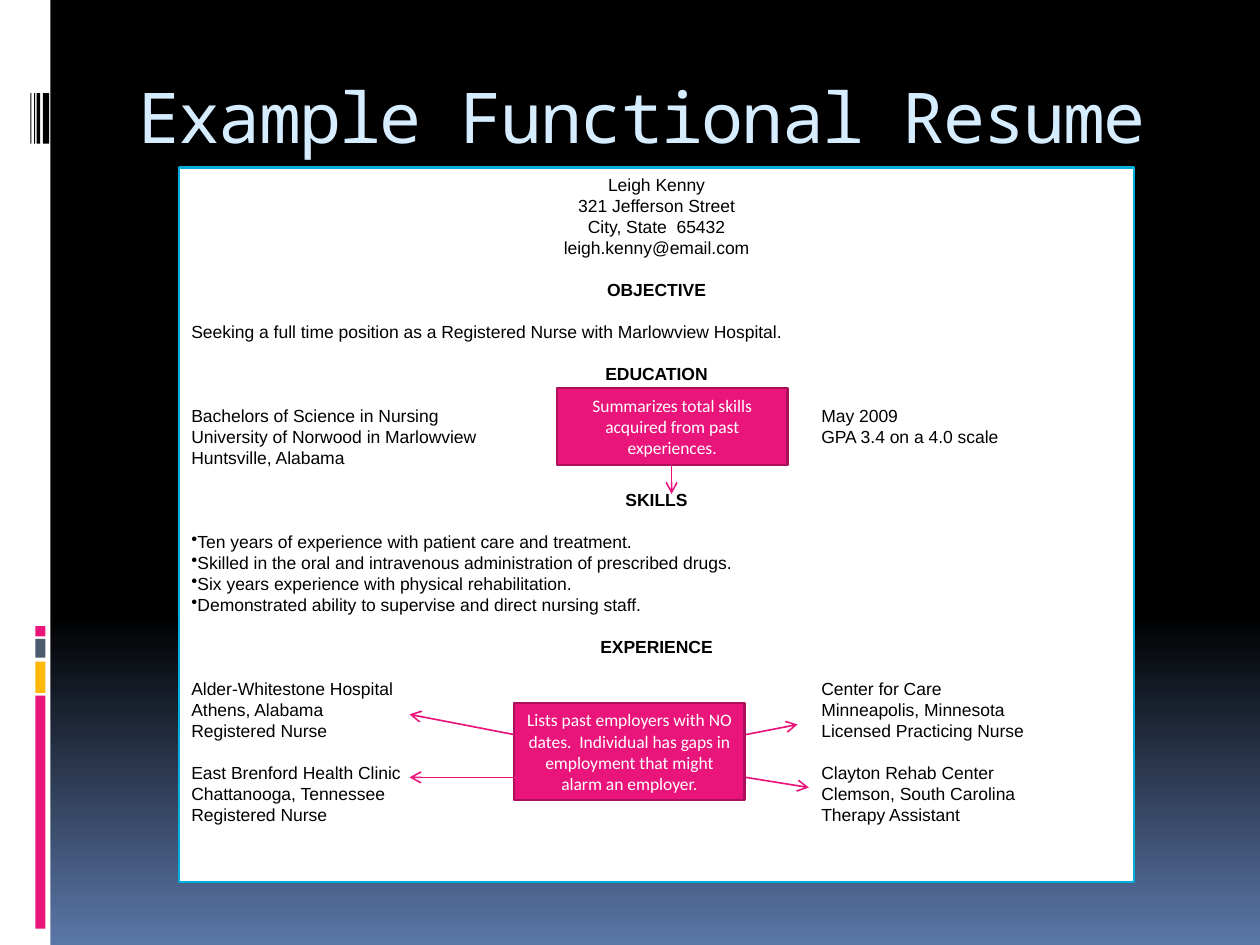
from dataclasses import dataclass

import lxml.etree
import pptx
import pptx.dml.color
import pptx.enum.shapes
import pptx.enum.text
import pptx.oxml.ns
import pptx.util
from pptx.util import Inches

ALIGN = pptx.enum.text.PP_ALIGN
ANCHOR = pptx.enum.text.MSO_ANCHOR


@dataclass(frozen=True)
class Theme:
    white: str = "FFFFFF"
    black: str = "000000"
    night_blue: str = "5B77A8"
    title_blue: str = "D6ECFF"
    cyan: str = "00ADDC"
    pink: str = "EA157A"
    dark_pink: str = "AD105A"
    amber: str = "FEB80A"
    slate: str = "4E5B6F"
    title_font: str = "Noto Sans Mono"
    resume_font: str = "Arial"
    callout_font: str = "Calibri"
    title_size: float = 40
    body_size: float = 10
    blank_line: float = 12
    outline: float = 1.5
    arrow: float = 0.94


@dataclass(frozen=True)
class Bar:
    left: float
    top: float
    width: float
    height: float
    color: str


@dataclass(frozen=True)
class Callout:
    left: float
    top: float
    width: float
    height: float
    text: str


@dataclass(frozen=True)
class Arrow:
    start: tuple[float, float]
    end: tuple[float, float]


@dataclass(frozen=True)
class Section:
    lines: tuple[str, ...]
    heading: bool = False
    centered: bool = False
    bulleted: bool = False


THEME = Theme()
RIGHT_COLUMN = 5.0

BARS = [
    Bar(0, 0, 0.4, 7.5, THEME.white),
    # Coloured stack
    Bar(0.28, 5.52, 0.08, 1.85, THEME.pink),
    Bar(0.28, 5.25, 0.08, 0.25, THEME.amber),
    Bar(0.28, 5.07, 0.08, 0.15, THEME.slate),
    Bar(0.28, 4.97, 0.08, 0.08, THEME.pink),
    # Black stripes
    *(Bar(left, 0.74, width, 0.4, THEME.black)
      for left, width in [(0.34, 0.05), (0.29, 0.03), (0.27, 0.01), (0.24, 0.01)]),
]

RESUME = [
    Section(("Leigh Kenny", "321 Jefferson Street", "City, State  65432",
             "leigh.kenny@email.com"), centered=True),
    Section(("OBJECTIVE",), heading=True),
    Section(("Seeking a full time position as a Registered Nurse with Marlowview Hospital.",)),
    Section(("EDUCATION",), heading=True),
    Section(("Bachelors of Science in Nursing\tMay 2009",
             "University of Norwood in Marlowview\tGPA 3.4 on a 4.0 scale",
             "Huntsville, Alabama")),
    Section(("SKILLS",), heading=True),
    Section(("Ten years of experience with patient care and treatment.",
             "Skilled in the oral and intravenous administration of prescribed drugs.",
             "Six years experience with physical rehabilitation.",
             "Demonstrated ability to supervise and direct nursing staff."), bulleted=True),
    Section(("EXPERIENCE",), heading=True),
    Section(("Alder-Whitestone Hospital\tCenter for Care",
             "Athens, Alabama\tMinneapolis, Minnesota",
             "Registered Nurse\tLicensed Practicing Nurse")),
    Section(("East Brenford Health Clinic\tClayton Rehab Center",
             "Chattanooga, Tennessee\tClemson, South Carolina",
             "Registered Nurse\tTherapy Assistant")),
]

CALLOUTS = [
    Callout(4.42, 3.08, 1.83, 0.61,
            "Summarizes total skills acquired from past experiences."),
    Callout(4.08, 5.58, 1.83, 0.77,
            "Lists past employers with NO dates.  Individual has gaps in employment "
            "that might alarm an employer."),
]

ARROWS = [
    Arrow((5.33, 3.69), (5.33, 3.92)),
    Arrow((4.08, 5.83), (3.25, 5.67)),
    Arrow((4.17, 6.17), (3.25, 6.17)),
    Arrow((5.92, 5.83), (6.33, 5.75)),
    Arrow((5.92, 6.17), (6.42, 6.25)),
]


def rgb(color: str) -> pptx.dml.color.RGBColor:
    return pptx.dml.color.RGBColor.from_string(color)


def add_xml(parent, tag: str, **attributes: str):
    return lxml.etree.SubElement(parent, pptx.oxml.ns.qn(tag), attributes)


def write(para, text: str, *, font: str, color: str, size: float = THEME.body_size,
          bold: bool = False, align=ALIGN.LEFT, space_before: float = 0):
    para.alignment = align
    para.space_before = pptx.util.Pt(space_before)
    span = para.add_run()
    span.text = text
    span.font.name = font
    span.font.size = pptx.util.Pt(size)
    span.font.bold = bold
    span.font.color.rgb = rgb(color)
    return span


def add_box(page, left: float, top: float, width: float, height: float,
            fill: str, line: str | None = None):
    box = page.shapes.add_shape(pptx.enum.shapes.MSO_SHAPE.RECTANGLE, Inches(left),
                                Inches(top), Inches(width), Inches(height))
    box.shadow.inherit = False
    box.fill.solid()
    box.fill.fore_color.rgb = rgb(fill)
    if line:
        box.line.color.rgb = rgb(line)
        box.line.width = pptx.util.Pt(THEME.outline)
    else:
        box.line.fill.background()
    box.text_frame.word_wrap = True
    return box


def add_title(page, text: str) -> None:
    box = page.shapes.add_textbox(Inches(1), Inches(0.56), Inches(8.5), Inches(1))
    box.text_frame.word_wrap = True
    box.text_frame.margin_top = Inches(0.02)
    span = write(box.text_frame.paragraphs[0], text, font=THEME.title_font,
                 color=THEME.title_blue, size=THEME.title_size)
    span.font._element.set("spc", "-100")


def add_resume(page, sections: list[Section]) -> None:
    frame = add_box(page, 1.42, 1.33, 7.58, 5.67, THEME.white, THEME.cyan).text_frame
    frame.vertical_anchor = ANCHOR.TOP
    para = frame.paragraphs[0]
    for number, section in enumerate(sections):
        for row, text in enumerate(section.lines):
            if number or row:
                para = frame.add_paragraph()
            centered = section.heading or section.centered
            write(para, text, font=THEME.resume_font, color=THEME.black,
                  bold=section.heading, align=ALIGN.CENTER if centered else ALIGN.LEFT,
                  space_before=THEME.blank_line if number and not row else 0)
            properties = para._p.get_or_add_pPr()
            if section.bulleted:
                add_xml(properties, "a:buChar", char="•")
            if "\t" in text:
                stops = add_xml(properties, "a:tabLst")
                add_xml(stops, "a:tab", pos=str(Inches(RIGHT_COLUMN)), algn="l")


def add_callout(page, callout: Callout) -> None:
    box = add_box(page, callout.left, callout.top, callout.width, callout.height,
                  THEME.pink, THEME.dark_pink)
    box.text_frame.vertical_anchor = ANCHOR.MIDDLE
    write(box.text_frame.paragraphs[0], callout.text, font=THEME.callout_font,
          color=THEME.white, align=ALIGN.CENTER)


def add_arrow(page, arrow: Arrow) -> None:
    points = [Inches(value) for value in (*arrow.start, *arrow.end)]
    line = page.shapes.add_connector(pptx.enum.shapes.MSO_CONNECTOR.STRAIGHT, *points)
    line.line.color.rgb = rgb(THEME.pink)
    line.line.width = pptx.util.Pt(THEME.arrow)
    add_xml(line.line._get_or_add_ln(), "a:tailEnd", type="arrow")
    add_xml(line._element.spPr, "a:effectLst")


def main() -> None:
    deck = pptx.Presentation()
    deck.slide_width, deck.slide_height = Inches(10), Inches(7.5)
    page = deck.slides.add_slide(deck.slide_layouts[6])

    # Background: black, fading to blue at the bottom
    fill = page.background.fill
    fill.gradient()
    fill.gradient_angle = 270
    fades = [(0.65, THEME.black), (1, THEME.night_blue)]
    for stop, (position, color) in zip(fill.gradient_stops, fades):
        stop.position = position
        stop.color.rgb = rgb(color)

    # Side strip
    for bar in BARS:
        add_box(page, bar.left, bar.top, bar.width, bar.height, bar.color)

    # Title, resume and annotations
    add_title(page, "Example Functional Resume")
    add_resume(page, RESUME)
    for callout in CALLOUTS:
        add_callout(page, callout)
    for arrow in ARROWS:
        add_arrow(page, arrow)

    deck.save("out.pptx")


if __name__ == "__main__":
    main()
